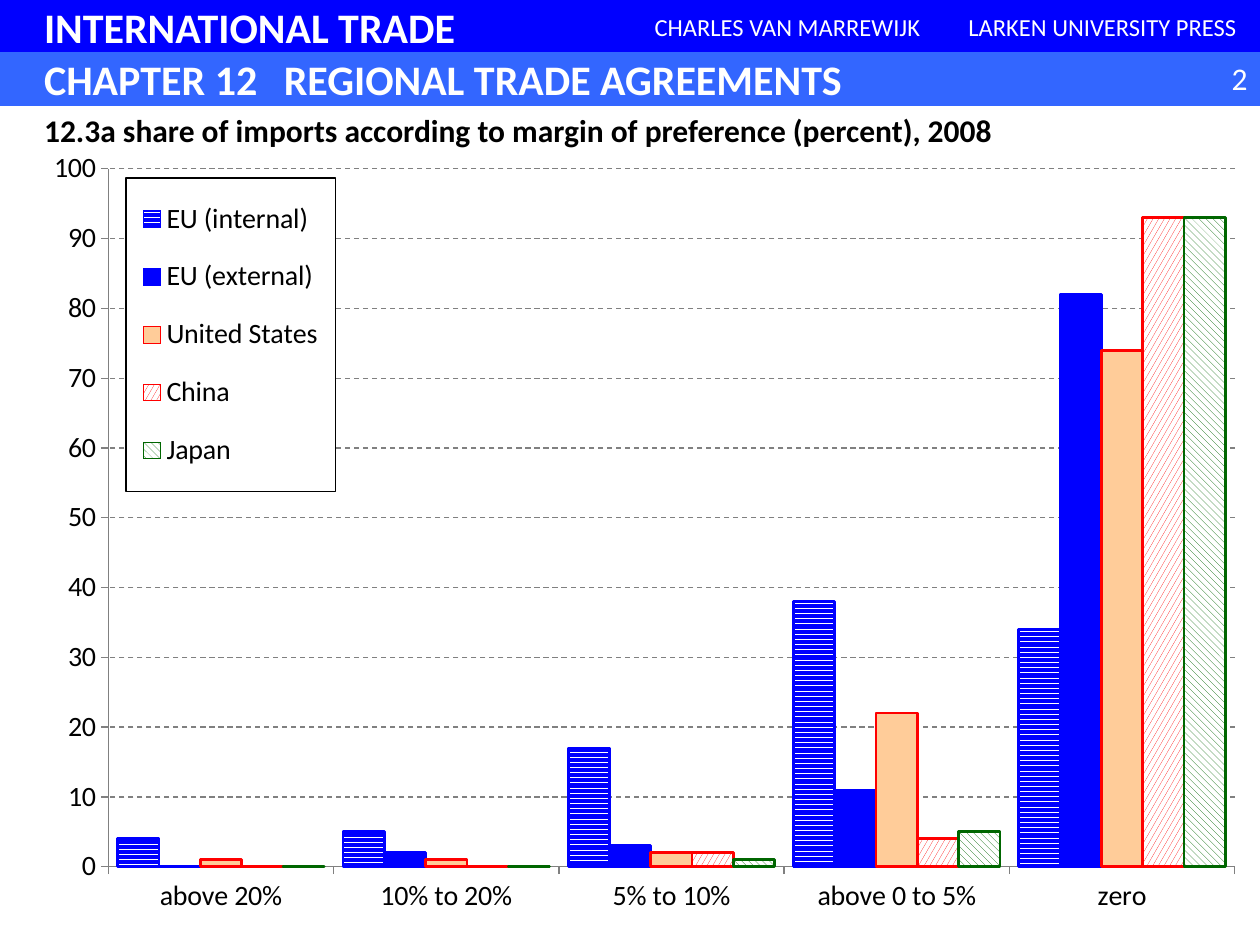
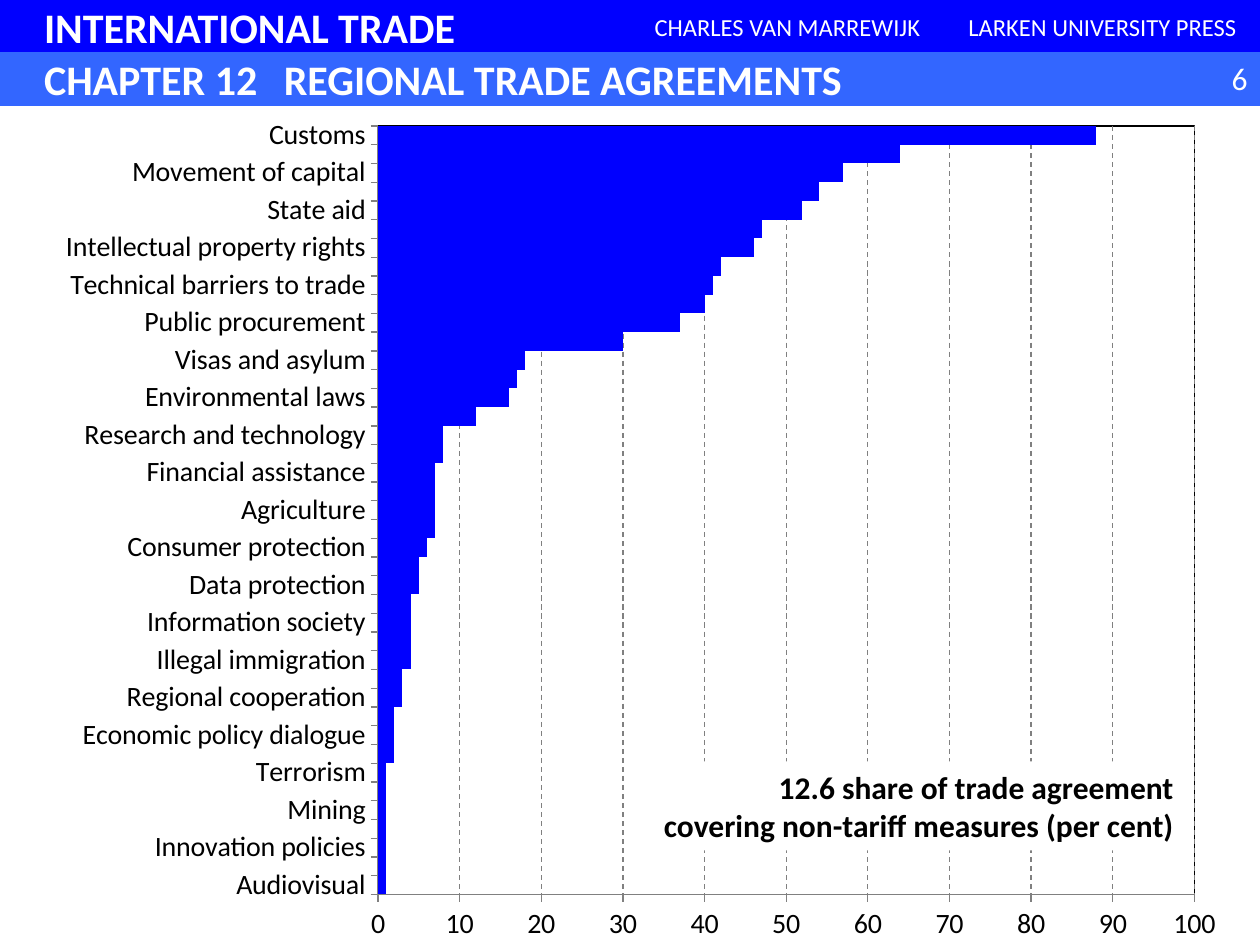
from lxml import etree
from pptx import Presentation
from pptx import util as u
from pptx.chart import data
from pptx.dml import color
from pptx.enum import chart as charts
from pptx.enum import dml, shapes, text
from pptx.oxml import ns

FONT = "Calibri"
COLOURS = {
    "blue": "0000FF",
    "light_blue": "3366FF",
    "white": "FFFFFF",
    "black": "000000",
    "grey": "808080",
    "peach": "FFCC99",
    "red": "FF0000",
    "green": "006600",
}
LEFT, CENTER, RIGHT = text.PP_ALIGN.LEFT, text.PP_ALIGN.CENTER, text.PP_ALIGN.RIGHT
WIDTH, HEIGHT, BAND = 720, 540, 30
TEXT_LEFT = 25.2

MARGINS = ["above 20%", "10% to 20%", "5% to 10%", "above 0 to 5%", "zero"]
IMPORTERS = [
    ("EU (internal)", (4, 5, 17, 38, 34), "blue", "blue", dml.MSO_PATTERN.DARK_HORIZONTAL),
    ("EU (external)", (0, 2, 3, 11, 82), "blue", "blue", None),
    ("United States", (1, 1, 2, 22, 74), "peach", "red", None),
    ("China", (0, 0, 2, 4, 93), "red", "red", dml.MSO_PATTERN.LARGE_CONFETTI),
    ("Japan", (0, 0, 1, 5, 93), "green", "green", dml.MSO_PATTERN.WIDE_DOWNWARD_DIAGONAL),
]
MEASURES = [
    ("Audiovisual", 1), ("Civil protection", 1), ("Innovation policies", 1),
    ("Health", 1), ("Mining", 1), ("Public administration", 1), ("Terrorism", 1),
    ("Cultural cooperation", 2), ("Economic policy dialogue", 2), ("Taxation", 2),
    ("Regional cooperation", 3), ("Statistics", 3), ("Illegal immigration", 4),
    ("Industrial cooperation", 4), ("Information society", 4), ("SMEs", 4),
    ("Data protection", 5), ("Education and training", 5), ("Consumer protection", 6),
    ("Anti-corruption", 7), ("Agriculture", 7), ("Approximation of legislation", 7),
    ("Financial assistance", 7), ("Energy", 8), ("Research and technology", 8),
    ("Social matters", 12), ("Environmental laws", 16), ("Labour market regulation", 17),
    ("Visas and asylum", 18), ("Sanitary measures", 30), ("Public procurement", 37),
    ("Competition policy", 40), ("Technical barriers to trade", 41), ("Investment", 42),
    ("Intellectual property rights", 46), ("State trading enterprises", 47),
    ("State aid", 52), ("Services - GATS", 54), ("Movement of capital", 57),
    ("Export taxes", 64), ("Customs", 88),
]


def rgb(name):
    return color.RGBColor.from_string(COLOURS[name])


def chart_node(tag, **attributes):
    return etree.Element(ns.qn("c:" + tag), attributes)


def manual_layout(x, y, w, h, inner=False):
    layout = chart_node("layout")
    manual = etree.SubElement(layout, ns.qn("c:manualLayout"))
    settings = [("layoutTarget", "inner")] if inner else []
    settings += [("xMode", "edge"), ("yMode", "edge"), ("x", x), ("y", y), ("w", w), ("h", h)]
    for tag, value in settings:
        manual.append(chart_node(tag, val=str(value)))
    return layout


def bordered_area(fill=None):
    area = chart_node("spPr")
    if fill:
        solid = etree.SubElement(area, ns.qn("a:solidFill"))
        etree.SubElement(solid, ns.qn("a:srgbClr"), val=COLOURS[fill])
    line = etree.SubElement(area, ns.qn("a:ln"), w=str(u.Pt(0.75)))
    solid = etree.SubElement(line, ns.qn("a:solidFill"))
    etree.SubElement(solid, ns.qn("a:srgbClr"), val=COLOURS["black"])
    return area


class Lecture:
    def __init__(self):
        self.deck = Presentation()
        self.deck.slide_width, self.deck.slide_height = u.Pt(WIDTH), u.Pt(HEIGHT)
        self.page = None

    def new_page(self, number):
        self.page = self.deck.slides.add_slide(self.deck.slide_layouts[5])
        self.band(0, 0, WIDTH, "blue", "INTERNATIONAL TRADE")
        self.band(360, 0, 180, "blue", "CHARLES VAN MARREWIJK", 14, False, CENTER)
        self.band(540, 0, 180, "blue", "LARKEN UNIVERSITY PRESS", 14, False, CENTER)
        chapter = self.band(0, BAND, WIDTH, "light_blue", "CHAPTER 12\tREGIONAL TRADE AGREEMENTS")
        properties = chapter.text_frame.paragraphs[0]._p.get_or_add_pPr()
        stops = etree.SubElement(properties, ns.qn("a:tabLst"))
        etree.SubElement(stops, ns.qn("a:tab"), pos=str(u.Pt(137)), algn="l")
        box = self.page.shapes.add_textbox(u.Pt(672), u.Pt(BAND), u.Pt(48), u.Pt(29))
        self.label(box, str(number), 18, False, RIGHT, "white")

    def label(self, box, words, size, bold, align, colour):
        frame = box.text_frame
        frame.word_wrap = True
        frame.auto_size = text.MSO_AUTO_SIZE.NONE
        frame.vertical_anchor = text.MSO_ANCHOR.MIDDLE
        para = frame.paragraphs[0]
        para.alignment = align
        span = para.add_run()
        span.text = words
        font = span.font
        font.name, font.size, font.bold = FONT, u.Pt(size), bold
        font.color.rgb = rgb(colour)

    def band(self, left, top, width, fill, words, size=24, bold=True, align=LEFT):
        box = self.page.shapes.add_shape(
            shapes.MSO_SHAPE.RECTANGLE, u.Pt(left), u.Pt(top), u.Pt(width), u.Pt(BAND))
        box.shadow.inherit = False
        box.fill.solid()
        box.fill.fore_color.rgb = rgb(fill)
        self.line(box.line, fill, 0.75)
        self.label(box, words, size, bold, align, "white")
        if align == LEFT:
            box.text_frame.margin_left = u.Pt(TEXT_LEFT)
        return box

    def title(self, words, left, top, width, height, align=LEFT, fill=None):
        box = self.page.shapes.title
        box.left, box.top = u.Pt(left), u.Pt(top)
        box.width, box.height = u.Pt(width), u.Pt(height)
        if fill:
            box.fill.solid()
            box.fill.fore_color.rgb = rgb(fill)
        self.label(box, words, 18, True, align, "black")
        box.element.getparent().append(box.element)

    def chart(self, kind, categories, series, gap, plot_place):
        table = data.CategoryChartData()
        table.categories = categories
        for name, values in series:
            table.add_series(name, values)
        chart = self.page.shapes.add_chart(
            kind, u.Pt(0), u.Pt(60), u.Pt(WIDTH), u.Pt(480), table).chart
        chart.has_title = chart.has_legend = False
        chart.font.name, chart.font.size = FONT, u.Pt(16)
        chart.font.color.rgb = rgb("black")
        plot = chart.plots[0]
        plot.gap_width, plot.overlap, plot.vary_by_categories = gap, 0, False
        for axis in (chart.category_axis, chart.value_axis):
            axis.major_tick_mark = charts.XL_TICK_MARK.OUTSIDE
            axis.minor_tick_mark = charts.XL_TICK_MARK.NONE
            axis.tick_labels.font.size = u.Pt(16)
            self.line(axis.format.line, "grey", 0.75)
        scale = chart.value_axis
        scale.minimum_scale, scale.maximum_scale, scale.major_unit = 0, 100, 10
        scale.has_major_gridlines = True
        self.line(scale.major_gridlines.format.line, "grey", 0.75)
        scale.major_gridlines.format.line.dash_style = dml.MSO_LINE.DASH
        area = chart.element.xpath(".//c:plotArea")[0]
        for layout in area.findall(ns.qn("c:layout")):
            area.remove(layout)
        area.insert(0, manual_layout(*plot_place, inner=True))
        return chart

    def line(self, line, colour, width):
        line.color.rgb = rgb(colour)
        line.width = u.Pt(width)

    def paint(self, series, fill, edge=None, pattern=None):
        series.invert_if_negative = False
        paint = series.format.fill
        if pattern:
            paint.patterned()
            paint.pattern = pattern
            paint.back_color.rgb = rgb("white")
        else:
            paint.solid()
        paint.fore_color.rgb = rgb(fill)
        if edge:
            self.line(series.format.line, edge, 1.5)

    def legend(self, chart, place):
        chart.has_legend = True
        chart.legend.position = charts.XL_LEGEND_POSITION.LEFT
        chart.legend.include_in_layout = False
        chart.legend.font.size = u.Pt(16)
        legend = chart.element.xpath(".//c:legend")[0]
        for layout in legend.findall(ns.qn("c:layout")):
            legend.remove(layout)
        legend.insert(1, manual_layout(*place))
        legend.find(ns.qn("c:overlay")).addnext(bordered_area("white"))


def preference_margins(lecture):
    lecture.new_page(2)
    chart = lecture.chart(
        charts.XL_CHART_TYPE.COLUMN_CLUSTERED, MARGINS,
        [importer[:2] for importer in IMPORTERS], 45, (0.086, 0.076, 0.894, 0.831))
    for series, importer in zip(chart.plots[0].series, IMPORTERS):
        lecture.paint(series, *importer[2:])
    lecture.legend(chart, (0.1, 0.087, 0.166, 0.373))
    lecture.title("12.3a share of imports according to margin of preference (percent), 2008",
                  18, 60, 600, 29)


def non_tariff_measures(lecture):
    lecture.new_page(6)
    names, shares = zip(*MEASURES)
    chart = lecture.chart(
        charts.XL_CHART_TYPE.BAR_CLUSTERED, names, [("Series 1", shares)],
        0, (0.3, 0.025, 0.648, 0.915))
    lecture.paint(chart.plots[0].series[0], "blue")
    chart.element.xpath(".//c:plotArea")[0].append(bordered_area())
    last = chart.element.xpath(".//c:catAx/c:noMultiLvlLbl")[0]
    last.addprevious(chart_node("tickLblSkip", val="2"))
    last.addprevious(chart_node("tickMarkSkip", val="1"))
    lecture.title("12.6 share of trade agreement covering non-tariff measures (per cent)",
                  372, 435, 306, 51, RIGHT, "white")


def main():
    lecture = Lecture()
    preference_margins(lecture)
    non_tariff_measures(lecture)
    lecture.deck.save("out.pptx")


if __name__ == "__main__":
    main()
